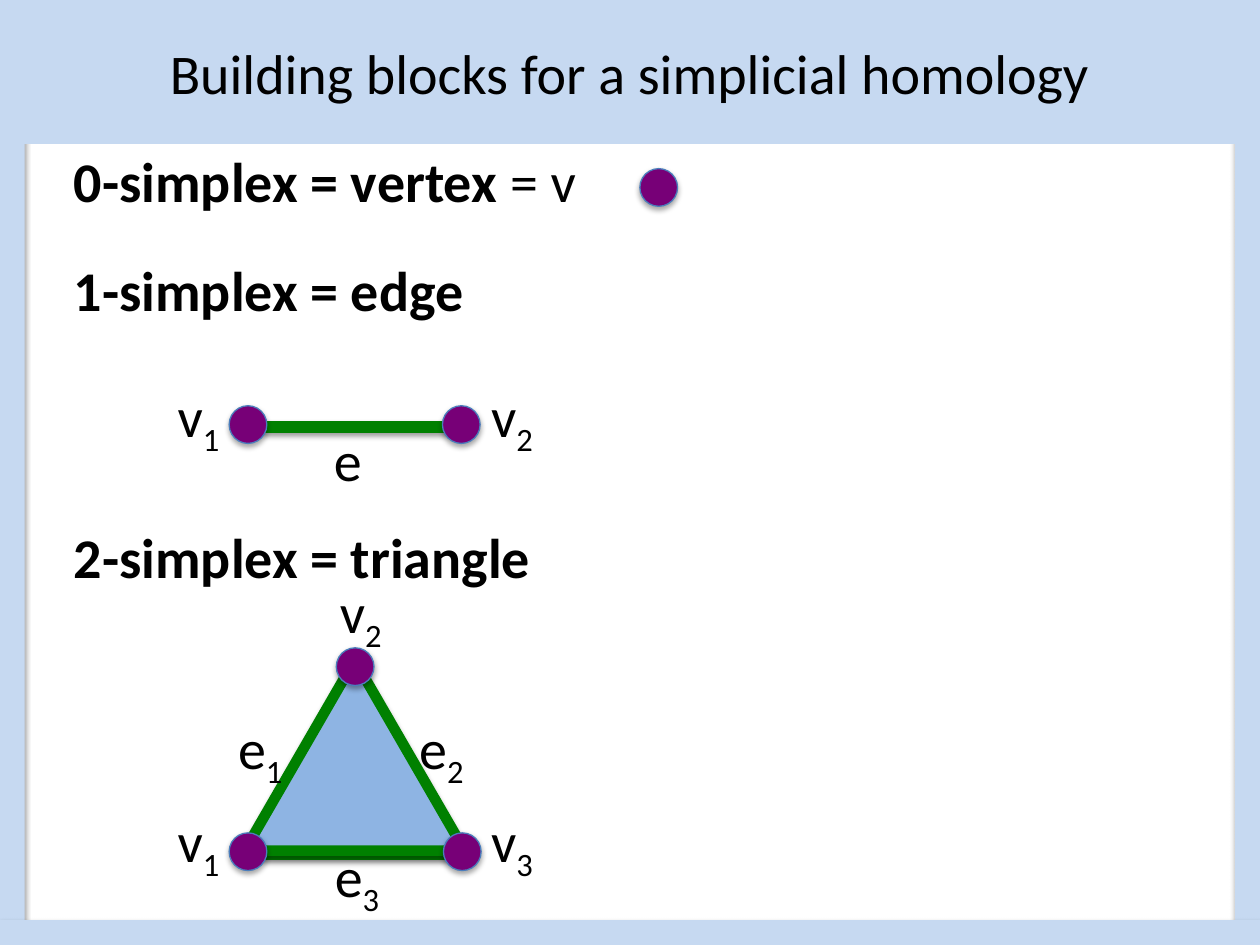
from lxml.etree import SubElement
from pptx import Presentation
from pptx.dml.color import RGBColor
from pptx.enum.shapes import MSO_CONNECTOR, MSO_SHAPE
from pptx.enum.text import MSO_ANCHOR, PP_ALIGN
from pptx.oxml.ns import qn
from pptx.util import Cm, Pt

BLACK = RGBColor(0x00, 0x00, 0x00)
PURPLE = RGBColor(0x77, 0x00, 0x77)
OUTLINE = RGBColor(0x4B, 0x7E, 0xBC)
GREEN = RGBColor(0x00, 0x80, 0x00)
FACE = RGBColor(0x8E, 0xB4, 0xE3)
FRAME = RGBColor(0xC6, 0xD9, 0xF1)

WIDTH, HEIGHT = 25.4, 19.05
BORDER, TITLE_HEIGHT = 0.5, 2.9
DOT = 0.76
TEXT_HEIGHT = 1.63

TITLE = "Building blocks for a simplicial homology"
# Top, bold part, plain part
HEADINGS = [
    (2.82, "0-simplex = vertex ", "= v"),
    (5.03, "1-simplex = edge", ""),
    (10.41, "2-simplex = triangle", ""),
]
# Centres of the vertices
LONE_VERTEX = [(13.28, 3.78)]
EDGE_VERTICES = [(5.0, 8.56), (9.3, 8.56)]
TRIANGLE_VERTICES = [(5.0, 17.17), (9.32, 17.17), (7.16, 13.44)]
# Left, top, letter, subscript
LABELS = [
    (3.33, 7.57, "v", "1"), (9.65, 7.57, "v", "2"), (6.48, 8.46, "e", ""),
    (3.33, 16.13, "v", "1"), (6.6, 11.51, "v", "2"), (9.65, 16.13, "v", "3"),
    (4.55, 14.25, "e", "1"), (8.2, 14.25, "e", "2"), (6.5, 16.84, "e", "3"),
]
# Left, top, width, height, shadow
BANDS = [
    (0, 0, BORDER, HEIGHT, True),
    (WIDTH - BORDER, 0, BORDER, HEIGHT, True),
    (0, HEIGHT - BORDER, WIDTH, BORDER, True),
]


def set_shadow(shape, visible=True, opacity=35, distance=1.8):
    properties = shape._element.spPr
    for old in properties.findall(qn("a:effectLst")):
        properties.remove(old)
    effects = SubElement(properties, qn("a:effectLst"))
    if visible:
        outer = SubElement(effects, qn("a:outerShdw"), blurRad=str(Pt(3.1)),
                           dist=str(Pt(distance)), dir="5400000", rotWithShape="0")
        color = SubElement(outer, qn("a:srgbClr"), val="000000")
        SubElement(color, qn("a:alpha"), val=str(opacity * 1000))


def add_span(para, text, bold=False, subscript=False):
    span = para.add_run()
    span.text = text
    span.font.name, span.font.size = "Calibri", Pt(32)
    span.font.bold, span.font.color.rgb = bold, BLACK
    if subscript:
        span._r.get_or_add_rPr().set("baseline", "-25000")


def add_text(page, left, top, width, text, tail="", bold=False, subscript=False):
    """Place one line of text; the tail is plain or a subscript."""
    box = page.shapes.add_textbox(Cm(left), Cm(top), Cm(width), Cm(TEXT_HEIGHT))
    box.text_frame.word_wrap = True
    para = box.text_frame.paragraphs[0]
    add_span(para, text, bold=bold)
    if tail:
        add_span(para, tail, subscript=subscript)


def add_solid(page, kind, left, top, width, height, fill,
              line=None, weight=0.75, shadow=True):
    shape = page.shapes.add_shape(kind, Cm(left), Cm(top), Cm(width), Cm(height))
    shape.fill.solid()
    shape.fill.fore_color.rgb = fill
    if line is None:
        shape.line.fill.background()
    else:
        shape.line.color.rgb, shape.line.width = line, Pt(weight)
    set_shadow(shape, shadow)
    return shape


def add_edge(page, left, right, y, weight):
    edge = page.shapes.add_connector(MSO_CONNECTOR.STRAIGHT,
                                     Cm(left), Cm(y), Cm(right), Cm(y))
    edge.line.color.rgb, edge.line.width = GREEN, Pt(weight)
    set_shadow(edge, opacity=38, distance=1.6)


def add_title(page):
    band = add_solid(page, MSO_SHAPE.RECTANGLE, 0, 0, WIDTH, TITLE_HEIGHT,
                     FRAME, shadow=False)
    band.text_frame.word_wrap = True
    band.text_frame.vertical_anchor = MSO_ANCHOR.MIDDLE
    para = band.text_frame.paragraphs[0]
    para.alignment = PP_ALIGN.CENTER
    add_span(para, TITLE)


def main():
    deck = Presentation()
    deck.slide_width, deck.slide_height = Cm(WIDTH), Cm(HEIGHT)
    page = deck.slides.add_slide(deck.slide_layouts[6])

    add_edge(page, 5.28, 9.15, 8.61, 7)
    add_edge(page, 5.28, 9.15, 17.25, 5)
    add_solid(page, MSO_SHAPE.ISOSCELES_TRIANGLE, 4.93, 13.31, 4.44, 3.84,
              FACE, line=GREEN, weight=6)
    for x, y in LONE_VERTEX + EDGE_VERTICES + TRIANGLE_VERTICES:
        add_solid(page, MSO_SHAPE.OVAL, x - DOT / 2, y - DOT / 2, DOT, DOT,
                  PURPLE, line=OUTLINE)
    for left, top, letter, index in LABELS:
        add_text(page, left, top, 1.8, letter, index, subscript=True)
    for top, name, symbol in HEADINGS:
        add_text(page, 1.24, top, 22.99, name, symbol, bold=True)
    for left, top, width, height, shadow in BANDS:
        add_solid(page, MSO_SHAPE.RECTANGLE, left, top, width, height,
                  FRAME, shadow=shadow)
    add_title(page)
    deck.save("out.pptx")


if __name__ == "__main__":
    main()
